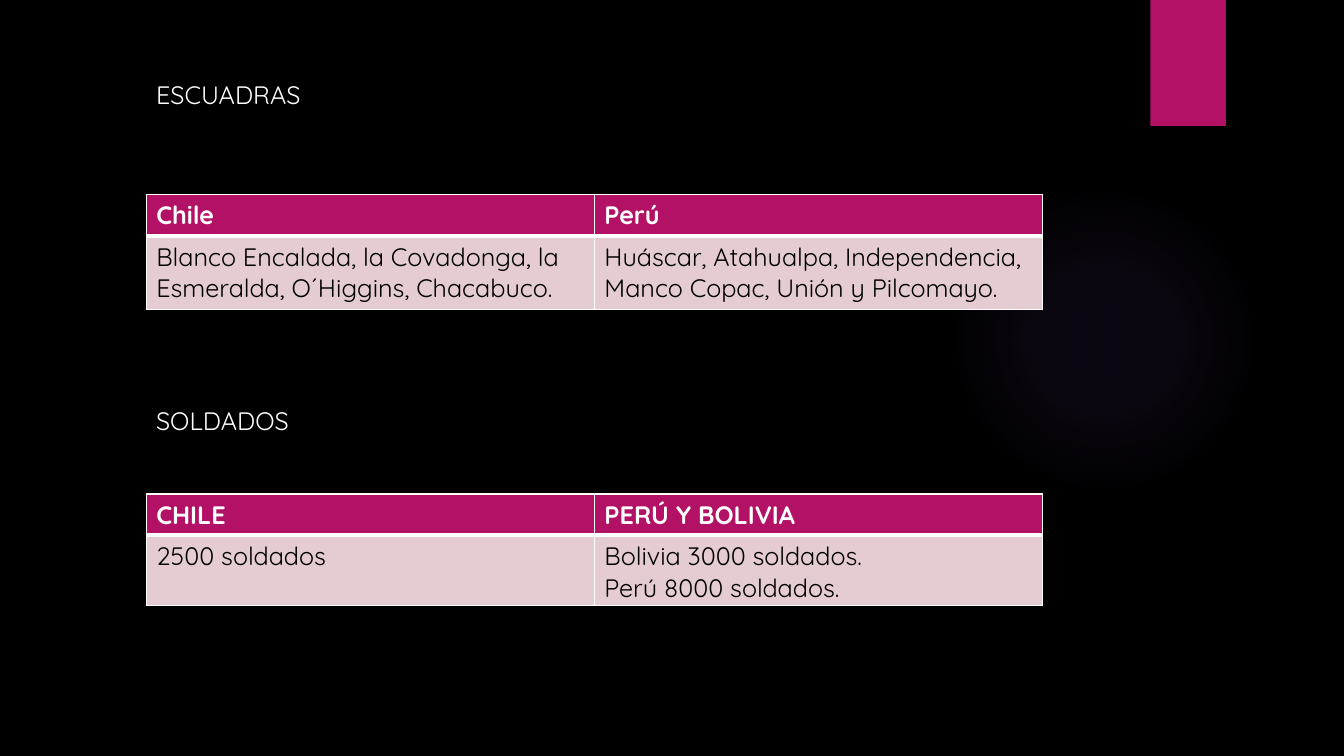
from dataclasses import dataclass

from lxml import etree
from pptx import Presentation
from pptx.dml.color import RGBColor
from pptx.enum.shapes import MSO_SHAPE
from pptx.enum.text import MSO_AUTO_SIZE
from pptx.oxml import parse_xml
from pptx.oxml.ns import nsdecls, qn
from pptx.util import Inches, Pt

OVAL = MSO_SHAPE.OVAL
RECTANGLE = MSO_SHAPE.RECTANGLE
GROW = MSO_AUTO_SIZE.SHAPE_TO_FIT_TEXT

ROWS = 75
LEFT = 14.5
COLUMN_SPAN = 44.45
HEADER_SPAN = 4.1


@dataclass(frozen=True)
class Theme:
    font: str = "Quicksand"
    size: int = 18
    black: str = "000000"
    white: str = "FFFFFF"
    accent: str = "B31166"
    tint: str = "E5CCD3"
    glow: str = "9B6BF2"
    glow_stops: tuple = ((0, 7), (36, 6), (69, 0))
    thin: int = 1
    thick: int = 3


class SlideBuilder:
    def __init__(self, deck, theme):
        self.theme = theme
        self.unit = deck.slide_height / ROWS
        self.slide = deck.slides.add_slide(deck.slide_layouts[6])
        self.paint(self.slide.background.fill, theme.black)

    def span(self, *cells):
        return [round(cell * self.unit) for cell in cells]

    def paint(self, fill, color):
        fill.solid()
        fill.fore_color.rgb = RGBColor.from_string(color)

    def set_text(self, frame, lines, color, bold=False):
        style = {"name": self.theme.font, "size": Pt(self.theme.size), "bold": bold}
        frame.text = "\n".join(lines)
        for paragraph in frame.paragraphs:
            for run in paragraph.runs:
                for attribute, value in style.items():
                    setattr(run.font, attribute, value)
                run.font.color.rgb = RGBColor.from_string(color)

    def shape(self, kind, *box):
        shape = self.slide.shapes.add_shape(kind, *self.span(*box))
        shape.shadow.inherit = False
        shape.line.fill.background()
        return shape

    def glow(self, *box):
        halo = self.shape(OVAL, *box)
        stops = "".join(
            f'<a:gs pos="{position * 1000}"><a:srgbClr val="{self.theme.glow}">'
            f'<a:alpha val="{opacity * 1000}"/></a:srgbClr></a:gs>'
            for position, opacity in self.theme.glow_stops
        )
        gradient = parse_xml(
            f'<a:gradFill {nsdecls("a")} rotWithShape="1"><a:gsLst>{stops}</a:gsLst>'
            '<a:path path="circle"><a:fillToRect l="50000" t="50000" r="50000" b="50000"/>'
            "</a:path></a:gradFill>"
        )
        halo.element.spPr.find(qn("a:prstGeom")).addnext(gradient)

    def block(self, color, *box):
        self.paint(self.shape(RECTANGLE, *box).fill, color)

    def heading(self, text, *box):
        frame = self.slide.shapes.add_textbox(*self.span(*box)).text_frame
        for attribute, value in {"word_wrap": True, "auto_size": GROW}.items():
            setattr(frame, attribute, value)
        self.set_text(frame, [text], self.theme.white)

    def border(self, cell, widths):
        properties = cell._tc.get_or_add_tcPr()
        for side, width in widths.items():
            line = etree.SubElement(properties, qn(f"a:ln{side}"), w=str(Pt(width)))
            fill = etree.SubElement(line, qn("a:solidFill"))
            etree.SubElement(fill, qn("a:srgbClr"), val=self.theme.white)

    def table(self, top, body_span, headers, body):
        theme = self.theme
        box = self.span(LEFT, top, COLUMN_SPAN * len(headers), HEADER_SPAN + body_span)
        table = self.slide.shapes.add_table(2, len(headers), *box).table
        table.horz_banding = False
        for row, height in zip(table.rows, self.span(HEADER_SPAN, body_span)):
            row.height = height
        thin_sides = dict.fromkeys("LRTB", theme.thin)
        rows = (
            ([[name] for name in headers], theme.white, theme.accent, True, "B"),
            (body, theme.black, theme.tint, False, "T"),
        )
        for row, (texts, color, fill, bold, thick_side) in enumerate(rows):
            for column, lines in enumerate(texts):
                cell = table.cell(row, column)
                self.border(cell, {**thin_sides, thick_side: theme.thick})
                self.paint(cell.fill, fill)
                self.set_text(cell.text_frame, lines, color, bold)


def main():
    deck = Presentation()
    deck.slide_width, deck.slide_height = Inches(13.33), Inches(7.5)
    theme = Theme()
    page = SlideBuilder(deck, theme)

    page.glow(94.1, 18.3, 30.8, 30.8)
    page.block(theme.accent, 114.1, 0, 7.5, 12.5)

    page.heading("ESCUADRAS", LEFT, 7.4, 75.5, 4)
    page.table(
        19.3,
        7.3,
        ["Chile", "Perú"],
        [
            ["Blanco Encalada, la Covadonga, la Esmeralda, O´Higgins, Chacabuco."],
            ["Huáscar, Atahualpa, Independencia, Manco Copac, Unión y Pilcomayo."],
        ],
    )

    page.heading("SOLDADOS", LEFT, 39.7, 37.7, 4)
    page.table(
        49,
        7,
        ["CHILE", "PERÚ Y BOLIVIA"],
        [["2500 soldados"], ["Bolivia 3000 soldados.", "Perú 8000 soldados."]],
    )

    deck.save("out.pptx")


if __name__ == "__main__":
    main()
